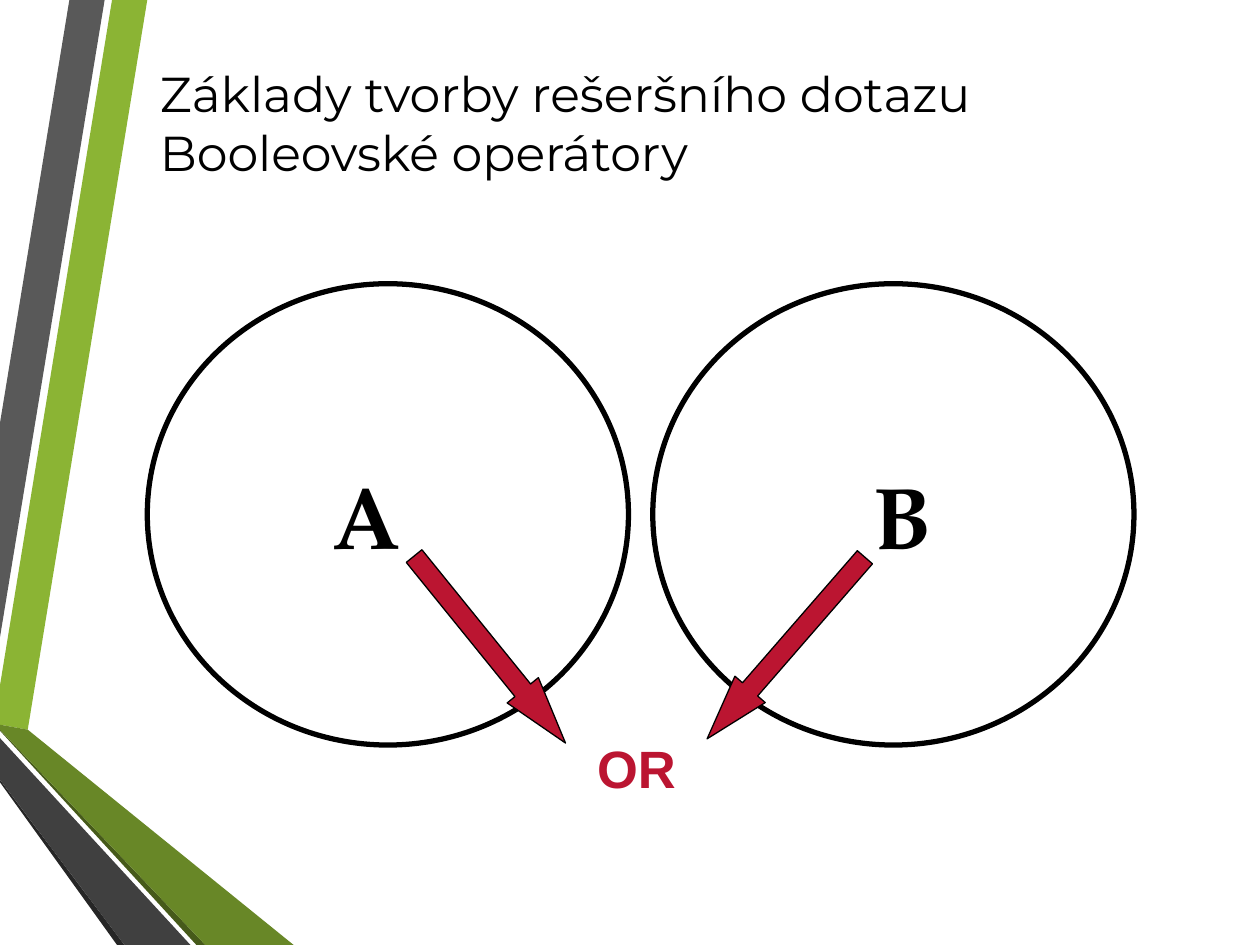
"""Build a slide that explains the Boolean operator OR with two circles."""
import pptx
import pptx.dml.color
import pptx.enum.shapes
import pptx.enum.text
import pptx.util

Cm = pptx.util.Cm
Pt = pptx.util.Pt
SHAPE = pptx.enum.shapes.MSO_SHAPE
ALIGN = pptx.enum.text.PP_ALIGN
ANCHOR = pptx.enum.text.MSO_ANCHOR

BLACK, RED = "000000", "BB1531"
WIDTH, HEIGHT = 25.4, 19.05

TITLE = ["Základy tvorby rešeršního dotazu", "Booleovské operátory"]
RIBBONS = [
    ("8BB434", [(0, 13.82), (0, 14.61), (0.56, 14.71), (2.97, 0), (2.26, 0)]),
    ("595959", [(2.11, 0), (1.4, 0), (0, 8.53), (0, 12.85)]),
    ("262626", [(0, 15.72), (0, 15.77), (2.36, HEIGHT), (2.51, HEIGHT)]),
    ("465A1A", [(0, 14.71), (0, 14.73), (3.96, HEIGHT), (4.14, HEIGHT)]),
    ("688727", [(0, 14.71), (4.14, HEIGHT), (5.92, HEIGHT), (0.56, 14.71), (0, 14.61)]),
    ("404040", [(0, 15.72), (2.51, HEIGHT), (3.84, HEIGHT), (0, 14.88)]),
]
CIRCLES = [(2.97, 5.72, 9.7, 9.3), (13.16, 5.72, 9.7, 9.3)]
ARROWS = [((9.47, 10.67, 0.81, 4.85), 321, 1.69), ((15.44, 10.64, 0.81, 4.85), 41, 1.63)]
LABELS = [
    ("A", (6.17, 9.19, 2.44, 2.39), "TeX Gyre Pagella", 50, BLACK, ALIGN.CENTER, 0.25),
    ("B", (16.97, 9.19, 2.44, 2.39), "TeX Gyre Pagella", 50, BLACK, ALIGN.CENTER, 0.25),
    ("OR", (10.52, 14.71, 4.09, 1.55), "Arial", 30, RED, ALIGN.JUSTIFY, 1.52),
]


def color(value):
    return pptx.dml.color.RGBColor.from_string(value)


def place(shape, frame):
    shape.left, shape.top, shape.width, shape.height = map(Cm, frame)


def paint(shape, fill=None, line=None, weight=0):
    shape.shadow.inherit = False
    if fill:
        shape.fill.solid()
        shape.fill.fore_color.rgb = color(fill)
    else:
        shape.fill.background()
    if line:
        shape.line.color.rgb = color(line)
        shape.line.width = Pt(weight)
    else:
        shape.line.fill.background()


def write(para, text, font, size, value, bold=False):
    span = para.add_run()
    span.text = text
    span.font.name = font
    span.font.size = Pt(size)
    span.font.bold = bold
    span.font.color.rgb = color(value)


def add_ribbon(page, fill, points):
    start, *rest = [(Cm(x), Cm(y)) for x, y in points]
    builder = page.shapes.build_freeform(*start)
    builder.add_line_segments(rest, close=True)
    paint(builder.convert_to_shape(), fill)


def add_title(page):
    box = page.shapes.title
    place(box, (2.97, 1.27, 21.41, 2.39))
    box.text_frame.vertical_anchor = ANCHOR.MIDDLE
    para = box.text_frame.paragraphs[0]
    para.alignment = ALIGN.LEFT
    for number, text in enumerate(TITLE):
        if number:
            para.add_line_break()
        write(para, text, "Montserrat", 28, BLACK)


def add_label(page, text, frame, font, size, value, align, inset):
    box = page.shapes.add_textbox(*map(Cm, frame))
    box.text_frame.word_wrap = True
    box.text_frame.margin_left = Cm(inset)
    para = box.text_frame.paragraphs[0]
    para.alignment = align
    write(para, text, font, size, value, bold=True)


def main():
    deck = pptx.Presentation()
    deck.slide_width, deck.slide_height = Cm(WIDTH), Cm(HEIGHT)
    page = deck.slides.add_slide(deck.slide_layouts.get_by_name("Title Only"))
    for fill, points in RIBBONS:
        add_ribbon(page, fill, points)
    add_title(page)
    for frame in CIRCLES:
        paint(page.shapes.add_shape(SHAPE.OVAL, *map(Cm, frame)), line=BLACK, weight=3)
    for frame, angle, head in ARROWS:
        arrow = page.shapes.add_shape(SHAPE.DOWN_ARROW, *map(Cm, frame))
        arrow.rotation = angle
        arrow.adjustments[0], arrow.adjustments[1] = 0.5, head
        paint(arrow, RED, BLACK, 0.75)
    for label in LABELS:
        add_label(page, *label)
    deck.save("out.pptx")


if __name__ == "__main__":
    main()
